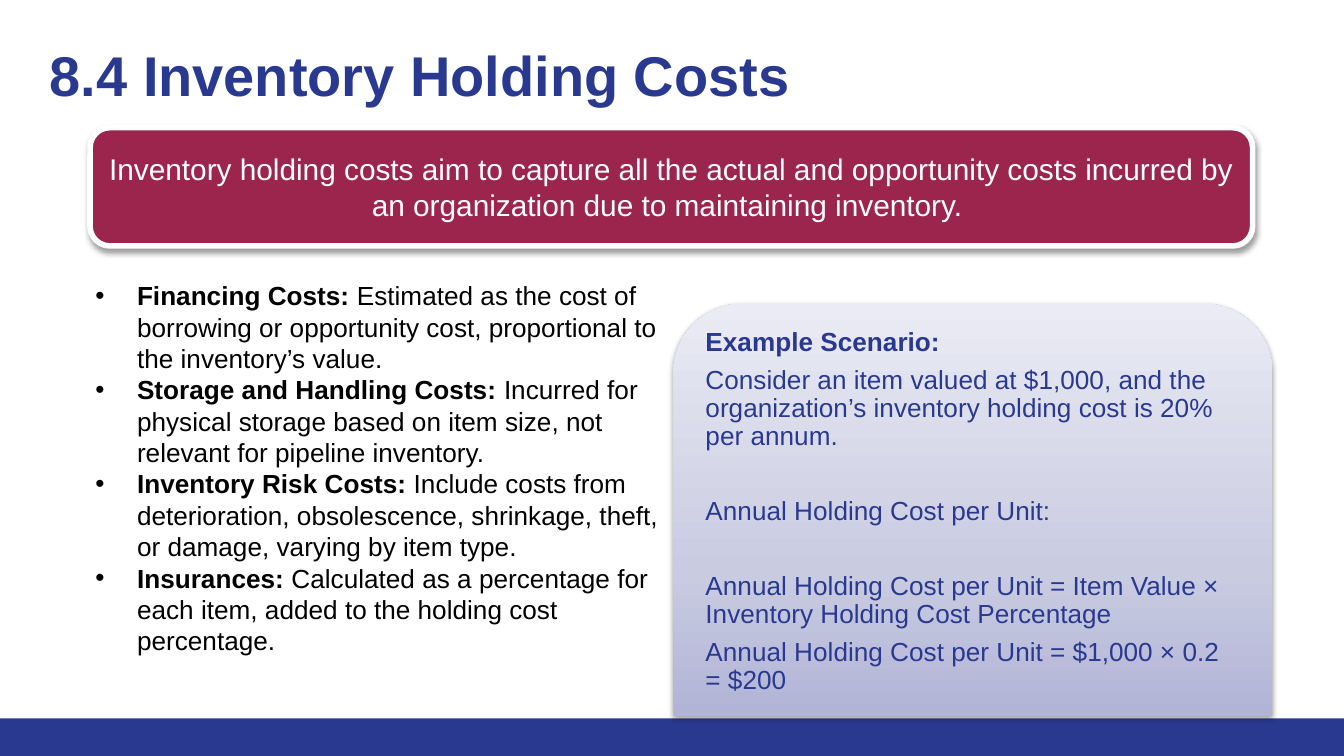
from lxml.etree import SubElement
from pptx import Presentation
from pptx.dml.color import RGBColor
from pptx.enum.shapes import MSO_SHAPE
from pptx.enum.text import MSO_ANCHOR, MSO_AUTO_SIZE, PP_ALIGN
from pptx.oxml.ns import qn
from pptx.util import Inches, Pt

NAVY = RGBColor(0x2A, 0x39, 0x90)
CRIMSON = RGBColor(0x9C, 0x25, 0x4D)
WHITE = RGBColor(0xFF, 0xFF, 0xFF)
BLACK = RGBColor(0, 0, 0)
SHADOW = RGBColor(0, 0, 0)
PANEL_STOPS = [
    (0, RGBColor(0xB1, 0xB4, 0xD6)),
    (35, RGBColor(0xC9, 0xCB, 0xE1)),
    (100, RGBColor(0xEA, 0xEB, 0xF4)),
]


def add_run(p, text, size, color, bold=False):
    r = p.add_run()
    r.text = text
    r.font.name = "Arial"
    r.font.size = Pt(size)
    r.font.bold = bold
    r.font.color.rgb = color


def add_shadow(sp):
    sp.shadow.inherit = False
    effects = sp._element.spPr.find(qn("a:effectLst"))
    outer = SubElement(effects, qn("a:outerShdw"), blurRad=str(Pt(3.1)),
                       dist=str(Pt(1.6)), dir="5400000", rotWithShape="0")
    clr = SubElement(outer, qn("a:srgbClr"), val=str(SHADOW))
    SubElement(clr, qn("a:alpha"), val="38000")


prs = Presentation()
prs.slide_width = Inches(10)
prs.slide_height = Inches(10) * 9 // 16
s = prs.slides.add_slide(prs.slide_layouts[1])

bar_height = Inches(0.28)
bar = s.shapes.add_shape(MSO_SHAPE.RECTANGLE, 0, prs.slide_height - bar_height,
                         prs.slide_width, bar_height)
bar.shadow.inherit = False
bar.fill.solid()
bar.fill.fore_color.rgb = NAVY
bar.line.fill.background()

title = s.shapes.title
title.left, title.top = Inches(0.27), Inches(0.2)
title.width, title.height = Inches(9.48), Inches(0.89)
tf = title.text_frame
tf.auto_size = MSO_AUTO_SIZE.NONE
tf.vertical_anchor = MSO_ANCHOR.TOP
tf.margin_left = tf.margin_top = tf.margin_right = tf.margin_bottom = Inches(0.1)
p = tf.paragraphs[0]
p.alignment = PP_ALIGN.LEFT
add_run(p, "8.4 Inventory Holding Costs", 30, NAVY, True)

banner = s.shapes.add_shape(MSO_SHAPE.ROUNDED_RECTANGLE, Inches(0.67), Inches(0.95),
                            Inches(8.65), Inches(0.88))
banner.fill.solid()
banner.fill.fore_color.rgb = CRIMSON
banner.line.color.rgb = WHITE
banner.line.width = Pt(3)
add_shadow(banner)
tf = banner.text_frame
tf.word_wrap = True
tf.vertical_anchor = MSO_ANCHOR.MIDDLE
p = tf.paragraphs[0]
p.alignment = PP_ALIGN.CENTER
add_run(p, "Inventory holding costs aim to capture all the actual and opportunity costs "
           "incurred by an organization due to maintaining inventory. ", 16, WHITE)

costs = [
    ("Financing Costs: ", "Estimated as the cost of borrowing or opportunity cost, "
                          "proportional to the inventory’s value."),
    ("Storage and Handling Costs: ", "Incurred for physical storage based on item size, "
                                     "not relevant for pipeline inventory."),
    ("Inventory Risk Costs: ", "Include costs from deterioration, obsolescence, shrinkage, "
                               "theft, or damage, varying by item type."),
    ("Insurances: ", "Calculated as a percentage for each item, added to the holding "
                     "cost percentage."),
]
body = s.placeholders[1]
body.left, body.top = Inches(0.61), Inches(2.03)
body.width, body.height = Inches(4.39), Inches(2.93)
tf = body.text_frame
tf.auto_size = MSO_AUTO_SIZE.NONE
tf.margin_right = Inches(0.05)
for i, (name, detail) in enumerate(costs):
    p = tf.add_paragraph() if i else tf.paragraphs[0]
    p.space_before = Pt(0)
    pPr = p._p.get_or_add_pPr()
    pPr.set("marL", str(Inches(0.31)))
    pPr.set("indent", str(Inches(-0.31)))
    add_run(p, name, 14, BLACK, True)
    add_run(p, detail, 14, BLACK)

panel = s.shapes.add_shape(MSO_SHAPE.ROUND_2_SAME_RECTANGLE, Inches(5.01), Inches(2.26),
                           Inches(4.46), Inches(3.07))
panel.fill.gradient()
panel.fill.gradient_angle = 90
stops = panel._element.spPr.find(qn("a:gradFill")).find(qn("a:gsLst"))
for stop in list(stops):
    stops.remove(stop)
for pos, color in PANEL_STOPS:
    stop = SubElement(stops, qn("a:gs"), pos=str(pos * 1000))
    SubElement(stop, qn("a:srgbClr"), val=str(color))
panel.line.fill.background()
add_shadow(panel)

scenario = [
    ("Example Scenario:", True, 0),
    ("Consider an item valued at $1,000, and the organization’s inventory holding cost "
     "is 20% per annum.", False, 0),
    ("Annual Holding Cost per Unit:", False, 20),
    ("Annual Holding Cost per Unit = Item Value × Inventory Holding Cost Percentage",
     False, 20),
    ("Annual Holding Cost per Unit = $1,000 × 0.2 = $200", False, 0),
]
tf = panel.text_frame
tf.word_wrap = True
tf.vertical_anchor = MSO_ANCHOR.TOP
tf.margin_left = tf.margin_right = Inches(0.09)
tf.margin_top, tf.margin_bottom = Inches(0.04), Inches(0.03)
for i, (text, bold, before) in enumerate(scenario):
    p = tf.add_paragraph() if i else tf.paragraphs[0]
    p.alignment = PP_ALIGN.LEFT
    p.line_spacing = 0.9
    p.space_before = Pt(before)
    p.space_after = Pt(5)
    add_run(p, text, 14, NAVY, bold)

prs.save("out.pptx")
